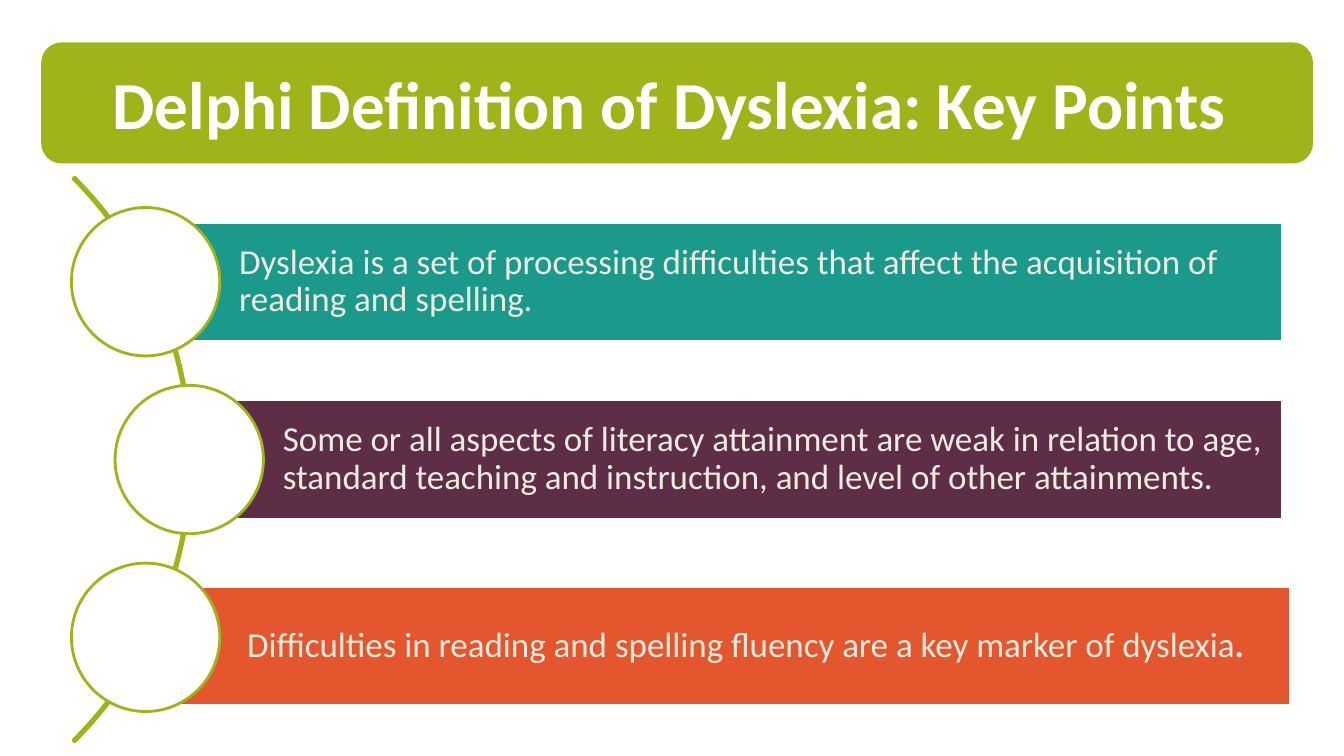
from dataclasses import dataclass

from pptx import Presentation
from pptx import util as u
from pptx.dml.color import RGBColor
from pptx.enum import shapes, text

Cm, Pt = u.Cm, u.Pt
Kind = shapes.MSO_SHAPE


@dataclass(frozen=True)
class Theme:
    font: str = "Calibri"
    title_size: int = 48
    point_size: int = 25
    line_width: int = 2
    white: str = "FFFFFF"
    cream: str = "EEECE1"
    lime: str = "A0B419"
    teal: str = "1B998B"
    plum: str = "5D2E46"
    orange: str = "E4572E"


THEME = Theme()

# Runs of (wording, bold), bar colour, indent along the arc, nudge of the bar
KEY_POINTS = [
    ([("Dyslexia is a set of processing difficulties that affect the "
       "acquisition of reading and spelling.", False)],
     THEME.teal, 0, (0, 0)),
    ([("Some or all aspects of literacy attainment are weak in relation to age, "
       "standard teaching and instruction, and level of other attainments.", False)],
     THEME.plum, 1.1, (0, 0)),
    ([("Difficulties in reading and spelling fluency are a key marker of dyslexia", False),
      (".", True)],
     THEME.orange, 0, (0.2, 0.22)),
]


def add_part(slide, kind, box, fill=None, line=None):
    """Add a flat shape; box is left, top, width, height in cm."""
    part = slide.shapes.add_shape(kind, *(Cm(length) for length in box))
    part.shadow.inherit = False
    if fill:
        part.fill.solid()
        part.fill.fore_color.rgb = RGBColor.from_string(fill)
    else:
        part.fill.background()
    if line:
        part.line.color.rgb = RGBColor.from_string(line)
        part.line.width = Pt(THEME.line_width)
    else:
        part.line.fill.background()
    return part


def write(part, runs, size, color, align):
    """Fill a shape with one vertically centred paragraph."""
    frame = part.text_frame
    frame.word_wrap = True
    frame.vertical_anchor = text.MSO_ANCHOR.MIDDLE
    paragraph = frame.paragraphs[0]
    paragraph.alignment = align
    font = paragraph.font
    font.name, font.size = THEME.font, Pt(size)
    font.color.rgb = RGBColor.from_string(color)
    for wording, bold in runs:
        run = paragraph.add_run()
        run.text = wording
        run.font.bold = bold
    return paragraph


def add_title(slide, box):
    banner = add_part(slide, Kind.ROUNDED_RECTANGLE, box, fill=THEME.lime)
    write(banner, [("Delphi Definition of Dyslexia: Key Points ", True)],
          THEME.title_size, THEME.white, text.PP_ALIGN.CENTER)


def add_key_points(slide, box):
    """Bars with circles, strung along an arc centred on the box's height."""
    left, top, width, height = box
    circle_size, bar_height, arc_size = 3.74, 3, 20.12
    pitch = (height - circle_size) / (len(KEY_POINTS) - 1)

    # Arc behind the circles, from 315 to 45 degrees
    arc_left, arc_top = left - 17.09, top + (height - arc_size) / 2
    arc = add_part(slide, Kind.BLOCK_ARC, (arc_left, arc_top, arc_size, arc_size),
                   line=THEME.lime)
    for index, value in enumerate((189, 27, 0.003)):
        arc.adjustments[index] = value

    for row, (runs, color, indent, (shift_x, shift_y)) in enumerate(KEY_POINTS):
        circle_left, circle_top = left + indent, top + row * pitch
        bar_left = circle_left + circle_size / 2
        bar_top = circle_top + (circle_size - bar_height) / 2

        # Bar starts at the middle of its circle
        bar = add_part(slide, Kind.RECTANGLE,
                       (bar_left + shift_x, bar_top + shift_y,
                        left + width - bar_left, bar_height),
                       fill=color, line=THEME.white)
        frame = bar.text_frame
        frame.margin_left = Cm(2.36)
        frame.margin_right = frame.margin_top = frame.margin_bottom = Cm(0.18)
        point = write(bar, runs, THEME.point_size, THEME.cream, text.PP_ALIGN.LEFT)
        point.line_spacing = 0.9

        add_part(slide, Kind.OVAL, (circle_left, circle_top, circle_size, circle_size),
                 fill=THEME.white, line=THEME.lime)


def main():
    deck = Presentation()
    deck.slide_width, deck.slide_height = Cm(33.87), Cm(19.05)
    slide = deck.slides.add_slide(deck.slide_layouts[6])
    add_title(slide, (1.04, 1.07, 32.05, 3.05))
    add_key_points(slide, (1.8, 5.23, 30.53, 12.7))
    deck.save("out.pptx")


if __name__ == "__main__":
    main()
